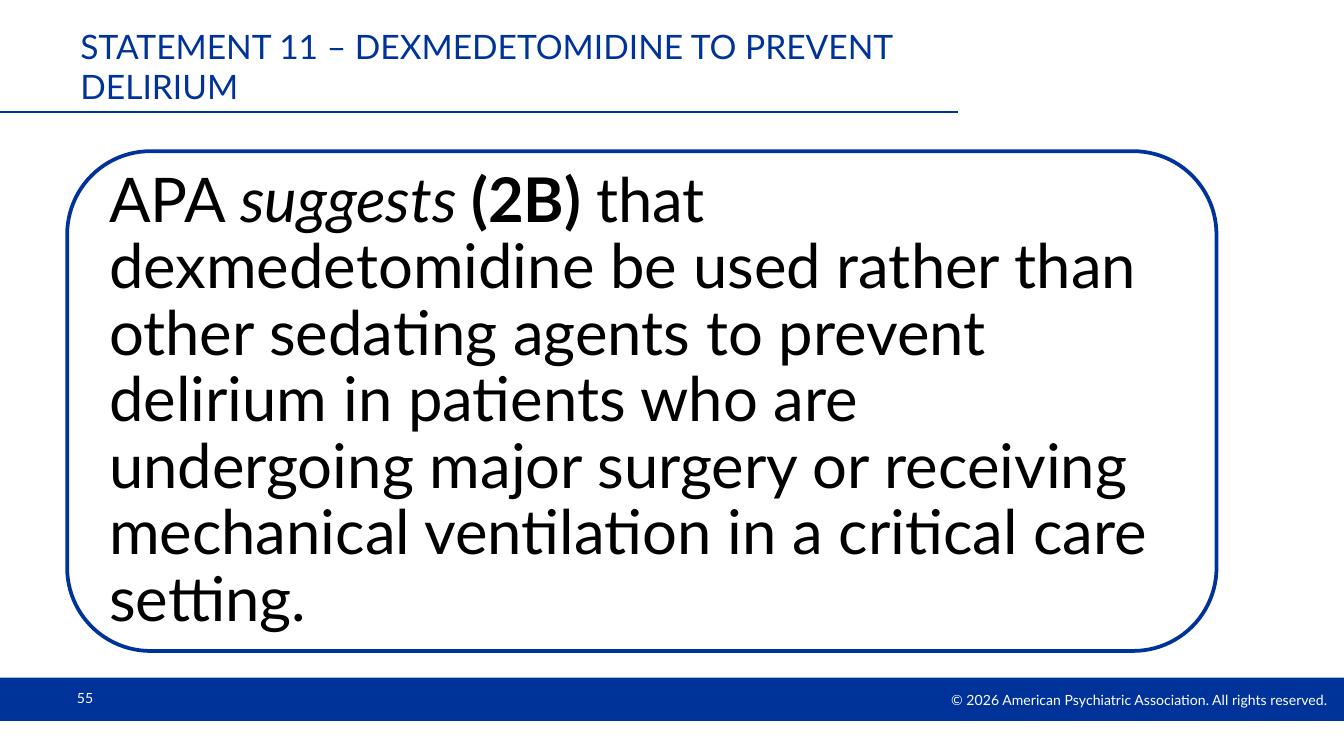
"""Build the guideline statement slide on dexmedetomidine and delirium."""
from lxml import etree
from pptx import Presentation
from pptx.dml.color import RGBColor
from pptx.enum.shapes import MSO_CONNECTOR, MSO_SHAPE
from pptx.enum.text import MSO_ANCHOR, PP_ALIGN
from pptx.oxml.ns import qn
from pptx.util import Pt

PX = 9525
BLUE = RGBColor(0x00, 0x33, 0x99)
WHITE = RGBColor(0xFF, 0xFF, 0xFF)
BLACK = RGBColor(0x00, 0x00, 0x00)
LEFT, RIGHT = PP_ALIGN.LEFT, PP_ALIGN.RIGHT
MIDDLE = MSO_ANCHOR.MIDDLE
RECTANGLE, ROUNDED = MSO_SHAPE.RECTANGLE, MSO_SHAPE.ROUNDED_RECTANGLE
STRAIGHT = MSO_CONNECTOR.STRAIGHT


def scaled(*lengths):
    return [length * PX for length in lengths]


def add_text(box, runs, size, color, align=LEFT, insets=None):
    frame = slide.shapes.add_textbox(*scaled(*box)).text_frame
    frame.word_wrap = True
    frame.vertical_anchor = MIDDLE
    if insets:
        frame.margin_left = frame.margin_right = insets[0] * PX
        frame.margin_top = frame.margin_bottom = insets[1] * PX
    paragraph = frame.paragraphs[0]
    paragraph.alignment = align
    paragraph.font.name = "Lato"
    paragraph.font.size = Pt(size)
    paragraph.font.color.rgb = color
    for text, bold, italic in runs:
        run = paragraph.add_run()
        run.text = text
        if bold:
            run.font.bold = True
        if italic:
            run.font.italic = True
    return paragraph


presentation = Presentation()
presentation.slide_width, presentation.slide_height = scaled(960, 540)
slide = presentation.slides.add_slide(presentation.slide_layouts[6])

footer = slide.shapes.add_shape(RECTANGLE, *scaled(0, 484, 960, 31))
footer.shadow.inherit = False
footer.fill.solid()
footer.fill.fore_color.rgb = BLUE
footer.line.fill.background()

title_rule = slide.shapes.add_connector(STRAIGHT, *scaled(0, 80, 684, 80))
title_rule.line.color.rgb = BLUE
title_rule.line.width = Pt(0.75)
etree.SubElement(title_rule.element.spPr, qn("a:effectLst"))

copyright_line = "© 2026 American Psychiatric Association. All rights reserved. "
add_text((540, 489, 420, 22), [(copyright_line, False, False)], 7.5, WHITE, RIGHT)
add_text((48, 484, 224, 29), [("55", False, False)], 7.5, WHITE, insets=(7, 4))

title = "STATEMENT 11 – DEXMEDETOMIDINE TO PREVENT DELIRIUM"
add_text((48, 24, 636, 46), [(title, False, False)], 18, BLUE)

statement_outline = slide.shapes.add_shape(ROUNDED, *scaled(48, 108, 821, 357))
statement_outline.shadow.inherit = False
statement_outline.fill.background()
statement_outline.line.color.rgb = BLUE
statement_outline.line.width = Pt(2)

statement_runs = [
    ("APA ", False, False),
    ("suggests ", False, True),
    ("(2B) ", True, False),
    ("that dexmedetomidine be used rather than other sedating agents to prevent "
     "delirium in patients who are undergoing major surgery or receiving "
     "mechanical ventilation in a critical care setting.", False, False),
]
statement = add_text((65, 126, 785, 322), statement_runs, 33, BLACK, insets=(13, 13))
statement.line_spacing = 0.9

presentation.save("out.pptx")
